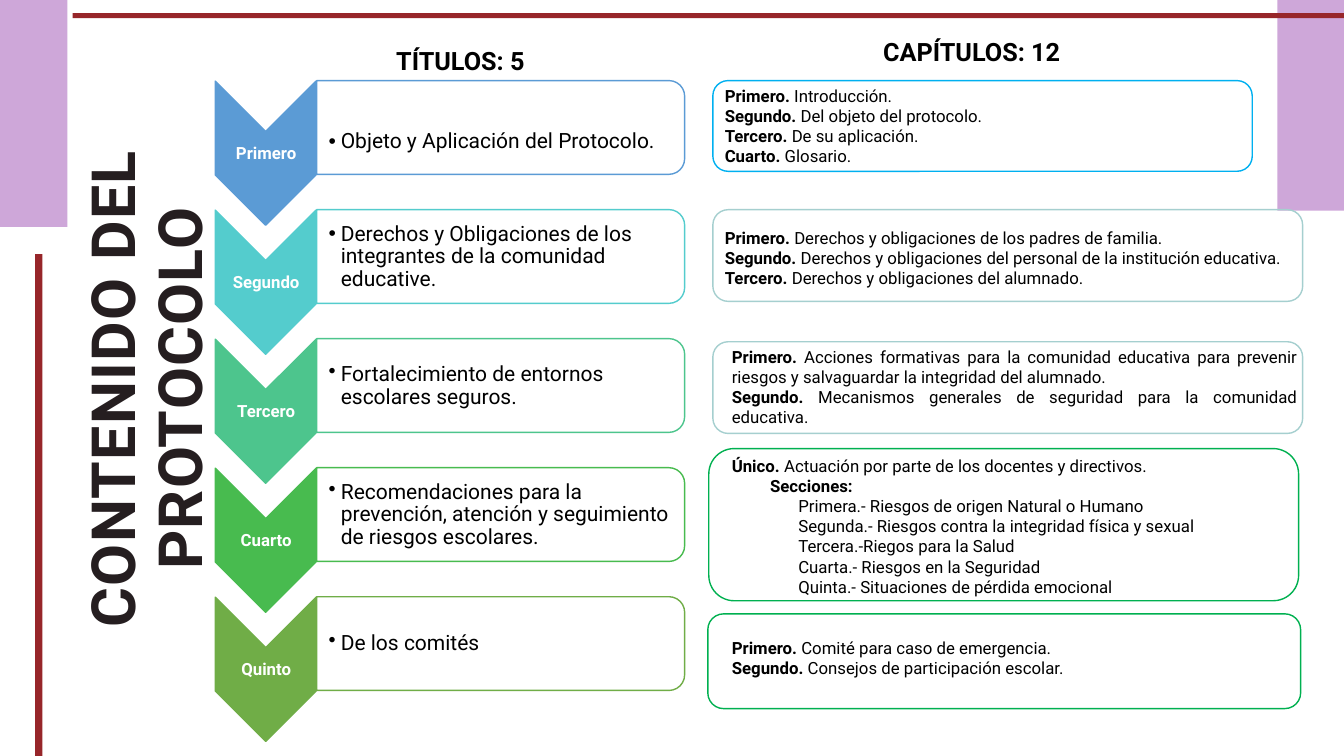
"""Build the slide that lists the titles and chapters of the protocol."""
from dataclasses import dataclass, field
from typing import Any

from lxml.etree import SubElement
from pptx import Presentation
from pptx.dml.color import RGBColor
from pptx.enum.shapes import MSO_SHAPE
from pptx.enum.text import MSO_ANCHOR, MSO_AUTO_SIZE, PP_ALIGN
from pptx.oxml.ns import qn
from pptx.util import Inches, Pt

HUES = {
    "lilac": "CEA7D9", "wine": "97262A", "ink": "251E20", "black": "000000",
    "white": "FFFFFF", "blue": "5B9BD5", "aqua": "54CCCD", "mint": "4DC58D",
    "green": "48BB4F", "olive": "70AD47", "sky": "00B0F0", "mist": "A5CFCF",
    "leaf": "00B050",
}
Place = tuple[float, float, float, float]
PITCH = 1.28


@dataclass
class Line:
    """One paragraph: a bold lead, plain text and a left indent."""
    lead: str = ""
    text: str = ""
    dent: float = 0


@dataclass
class Row:
    """One title of the protocol with its chapters."""
    name: str
    topic: str
    hue: str
    edge: str
    frame: Place
    area: Place
    lines: list[Line]
    side: Any = PP_ALIGN.JUSTIFY
    inset: float = field(default=0.01)


BARS = [
    ("lilac", (0, 0, 0.67, 2.25)), ("wine", (0.35, 2.52, 0.07, 4.98)),
    ("lilac", (12.67, 0, 0.66, 2.09)), ("wine", (0.72, 0.13, 12.61, 0.05)),
]
HEADS = [
    (1, "TÍTULOS: 5", (3.83, 0.4, 1.66, 0.4)),
    (3, "CAPÍTULOS: 12", (8.66, 0.31, 2.69, 0.4)),
]
ROWS = [
    Row("Primero", "Objeto y Aplicación del Protocolo.", "blue", "sky",
        (7.07, 0.8, 5.35, 0.9), (7.09, 0.8, 4.94, 0.91),
        [Line("Primero.", " Introducción."),
         Line("Segundo.", " Del objeto del protocolo."),
         Line("Tercero.", " De su aplicación."),
         Line("Cuarto.", " Glosario.")], PP_ALIGN.LEFT, 0.29),
    Row("Segundo",
        "Derechos y Obligaciones de los integrantes de la comunidad educative.",
        "aqua", "mist", (7.07, 2.08, 5.85, 0.91), (7.09, 2.21, 5.79, 0.91),
        [Line("Primero.", " Derechos y obligaciones de los padres de familia."),
         Line("Segundo.", " Derechos y obligaciones del personal de la "
              "institución educativa."),
         Line("Tercero.", " Derechos y obligaciones del alumnado.")]),
    Row("Tercero", "Fortalecimiento de entornos escolares seguros.",
        "mint", "mist", (7.07, 3.39, 5.85, 0.91), (7.16, 3.39, 5.81, 0.91),
        [Line("Primero.", " Acciones formativas para la comunidad educativa "
              "para prevenir riesgos y salvaguardar la integridad del alumnado."),
         Line("Segundo.", " Mecanismos generales de seguridad para la "
              "comunidad educativa.")]),
    Row("Cuarto", "Recomendaciones para la prevención, atención y seguimiento "
        "de riesgos escolares.",
        "green", "leaf", (7.03, 4.45, 5.85, 1.51), (7.16, 4.47, 5.3, 1.51),
        [Line("Único.", " Actuación por parte de los docentes y directivos."),
         Line("Secciones:", dent=0.38),
         Line("", "Primera.- Riesgos de origen Natural o Humano", 0.66),
         Line("", "Segunda.- Riesgos contra la integridad física y sexual", 0.66),
         Line("", "Tercera.-Riegos para la Salud", 0.66),
         Line("", "Cuarta.- Riesgos en la Seguridad", 0.66),
         Line("", "Quinta.- Situaciones de pérdida emocional", 0.66)]),
    Row("Quinto", "De los comités", "olive", "leaf",
        (7.02, 6.09, 5.88, 0.94), (7.16, 6.28, 5.38, 0.5),
        [Line("Primero.", " Comité para caso de emergencia."),
         Line("Segundo.", " Consejos de participación escolar.")]),
]


def apply(item: Any, **vals: Any) -> None:
    """Set each named value on the item."""
    for key, val in vals.items():
        setattr(item, key, val)


def move(item: Any, place: Place) -> None:
    """Put the item at a place given in inches."""
    apply(item, **dict(zip(("left", "top", "width", "height"), map(Inches, place))))


def draw(slide: Any, kind: Any, place: Place, fill: str = "", edge: str = "",
         turn: float = 0) -> Any:
    """Draw a preset shape with a fill, an edge and a turn."""
    shape = slide.shapes.add_shape(kind, *map(Inches, place))
    shape.shadow.inherit = False
    shape.rotation = turn
    if fill:
        shape.fill.solid()
        shape.fill.fore_color.rgb = RGBColor.from_string(HUES[fill])
    else:
        shape.fill.background()
    if edge:
        shape.line.color.rgb = RGBColor.from_string(HUES[edge])
        shape.line.width = Pt(1)
    else:
        shape.line.fill.background()
    return shape


def write(box: Any, lines: list[Line], size: float, hue: str = "black",
          frame: dict[str, Any] | None = None, **para: Any) -> Any:
    """Fill a box with formatted paragraphs."""
    text = box.text_frame
    apply(text, word_wrap=True, auto_size=MSO_AUTO_SIZE.NONE,
          vertical_anchor=MSO_ANCHOR.TOP)
    apply(text, **(frame or {}))
    for num, line in enumerate(lines):
        item = text.add_paragraph() if num else text.paragraphs[0]
        apply(item, **{"space_before": Pt(0), **para})
        if line.dent:
            item._p.get_or_add_pPr().set("marL", str(Inches(line.dent)))
        for part, bold in ((line.lead, True), (line.text, False)):
            if part:
                run = item.add_run()
                run.text = part
                apply(run.font, name="Roboto", size=Pt(size), bold=bold)
                run.font.color.rgb = RGBColor.from_string(HUES[hue])
    return text


def inset(left: float, top: float, rest: float) -> dict[str, Any]:
    """Give the margins of a text frame."""
    return {"margin_left": Inches(left), "margin_top": Inches(top),
            "margin_right": Inches(rest), "margin_bottom": Inches(rest)}


def add_row(slide: Any, row: Row, num: int, spare: list[Any]) -> None:
    """Draw one row: chevron, topic card and chapter frame."""
    drop = num * PITCH
    mid = {"vertical_anchor": MSO_ANCHOR.MIDDLE}
    draw(slide, MSO_SHAPE.CHEVRON, (1.92, 1.02 + drop, 1.43, 1), row.hue, row.hue, 90)
    label = slide.shapes.add_textbox(*map(Inches, (2.14, 1.31 + drop, 1, 0.43)))
    write(label, [Line(row.name)], 12, "white", {**mid, **inset(0.01, 0.01, 0.01)},
          alignment=PP_ALIGN.CENTER, line_spacing=0.9)
    card = draw(slide, MSO_SHAPE.ROUND_2_SAME_RECTANGLE,
                (4.5, drop - 0.56, 0.93, 3.65), "white", row.hue, 90)
    tone = card._element.spPr.find(qn("a:solidFill")).find(qn("a:srgbClr"))
    SubElement(tone, qn("a:alpha")).set("val", "90000")
    if spare:
        topic = spare.pop(0)
        slide.shapes._spTree.append(topic._element)
    else:
        topic = slide.shapes.add_textbox(0, 0, 0, 0)
    move(topic, (3.14, 0.85 + drop, 3.61, 0.84))
    text = write(topic, [Line("", row.topic)], 15,
                 frame={**mid, **inset(0.12, row.inset, 0.01)}, line_spacing=0.9)
    props = text.paragraphs[0]._p.get_or_add_pPr()
    props.set("marL", str(Inches(0.12)))
    props.set("indent", str(-Inches(0.12)))
    SubElement(props, qn("a:buChar")).set("char", "•")
    draw(slide, MSO_SHAPE.ROUNDED_RECTANGLE, row.frame, edge=row.edge)
    notes = slide.shapes.add_textbox(*map(Inches, row.area))
    write(notes, row.lines, 12, alignment=row.side)


def main() -> None:
    """Build and save the slide."""
    deck = Presentation()
    apply(deck, slide_width=Inches(13.33), slide_height=Inches(7.5))
    slide = deck.slides.add_slide(deck.slide_layouts[4])
    slots = {slot.placeholder_format.idx: slot for slot in slide.placeholders}
    for hue, place in BARS:
        draw(slide, MSO_SHAPE.RECTANGLE, place, hue)
    title = slots[0]
    move(title, (-1.18, 3.18, 5.3, 1.35))
    title.rotation = 270
    text = write(title, [Line("CONTENIDO DEL PROTOCOLO")], 43.5, "ink",
                 inset(0, 0, 0), alignment=PP_ALIGN.CENTER, line_spacing=Pt(47.9))
    text.paragraphs[0].runs[0]._r.get_or_add_rPr().set("spc", "90")
    for key, words, place in HEADS:
        move(slots[key], place)
        write(slots[key], [Line(words)], 18)
    spare = [slots[2], slots[4]]
    for num, row in enumerate(ROWS):
        add_row(slide, row, num, spare)
    deck.save("out.pptx")


if __name__ == "__main__":
    main()
